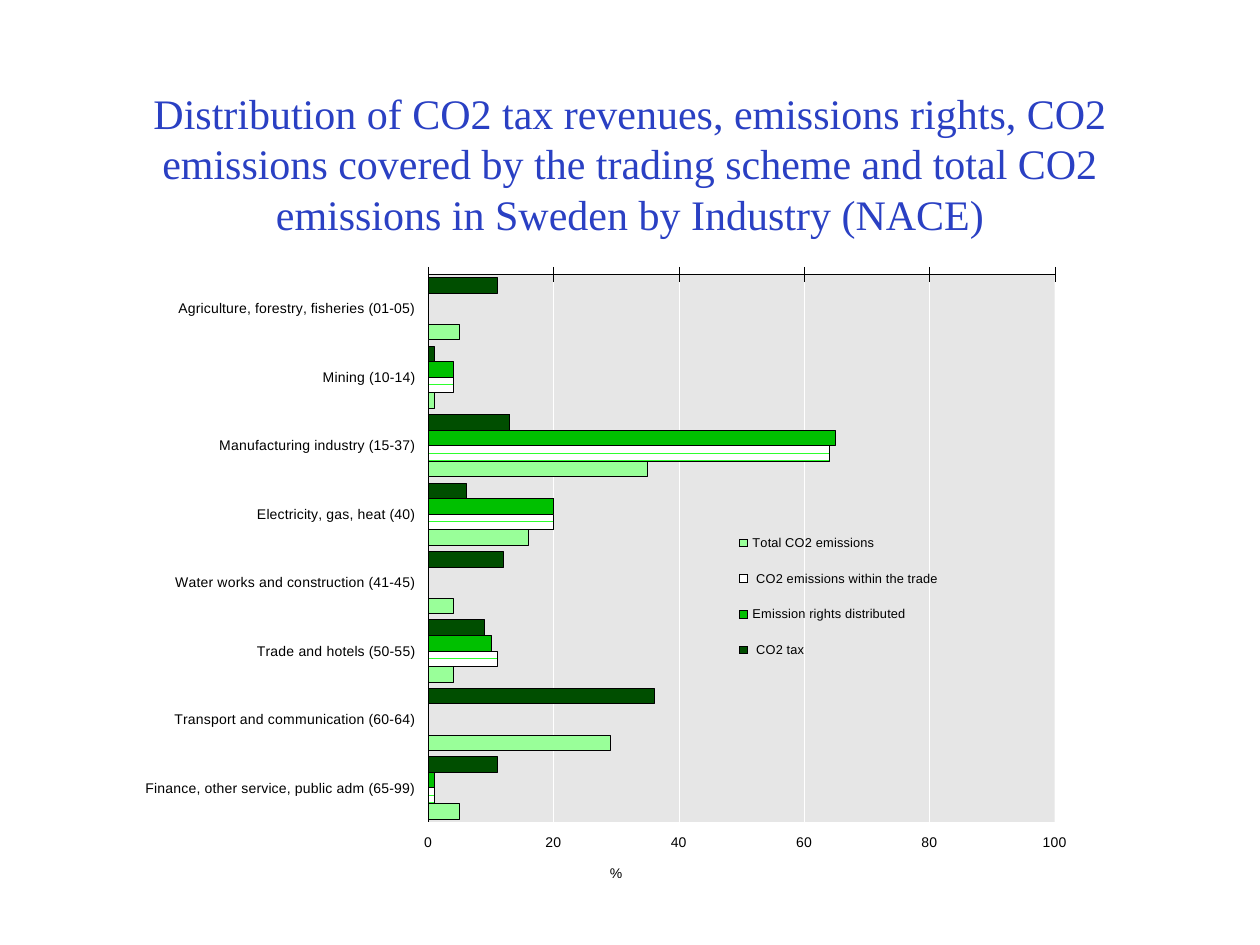
from lxml.etree import SubElement
from pptx import Presentation
from pptx.chart.data import CategoryChartData
from pptx.dml.color import RGBColor
from pptx.enum.chart import (XL_CHART_TYPE, XL_LEGEND_POSITION,
                             XL_TICK_LABEL_POSITION, XL_TICK_MARK)
from pptx.enum.dml import MSO_PATTERN
from pptx.enum.text import MSO_ANCHOR, PP_ALIGN
from pptx.oxml.ns import qn
from pptx.util import Cm, Pt

TITLE = ("Distribution of CO2 tax revenues, emissions rights, CO2 emissions "
         "covered by the trading scheme and total CO2 emissions in Sweden "
         "by Industry (NACE)")

# Industry: one value for each series
ROWS = {
    "Agriculture, forestry, fisheries (01-05)": (11, 0, 0, 5),
    "Mining (10-14)": (1, 4, 4, 1),
    "Manufacturing industry (15-37)": (13, 65, 64, 35),
    "Electricity, gas, heat (40)": (6, 20, 20, 16),
    "Water works and construction (41-45)": (12, 0, 0, 4),
    "Trade and hotels (50-55)": (9, 10, 11, 4),
    "Transport and communication (60-64)": (36, 0, 0, 29),
    "Finance, other service, public adm (65-99)": (11, 1, 1, 5),
}

# Series: a plain colour, or the two colours of a dashed pattern
SERIES = {
    " CO2 tax": ("004E00",),
    "Emission rights distributed": ("00C000",),
    " CO2 emissions within the trade": ("2DFF2D", "FFFFFF"),
    "Total CO2 emissions": ("99FF99",),
}


def color(code):
    return RGBColor.from_string(code)


class Deck:
    ink, head, back, grid = "000000", "2A40C3", "E6E6E6", "FFFFFF"
    sans, serif = "Arial", "Times New Roman"

    def __init__(self, width, height):
        self.file = Presentation()
        self.file.slide_width, self.file.slide_height = Cm(width), Cm(height)
        self.slide = self.file.slides.add_slide(self.file.slide_layouts[6])

    def style(self, font, size, face, code):
        font.size, font.name, font.bold = Pt(size), face, False
        font.color.rgb = color(code)

    def line(self, form, code):
        form.line.width = Pt(0.25)
        form.line.color.rgb = color(code)

    def place(self, node, index, **spots):
        """Give a chart part a fixed place, in fractions of the chart."""
        for old in node.findall(qn("c:layout")):
            node.remove(old)
        layout = SubElement(node, qn("c:layout"))
        node.insert(index, layout)
        manual = SubElement(layout, qn("c:manualLayout"))
        if "w" in spots:
            spots = {"layoutTarget": "inner", **spots} if index == 0 else spots
        modes = {"xMode": "edge", "yMode": "edge"}
        target = {k: v for k, v in spots.items() if k == "layoutTarget"}
        for tag, value in {**target, **modes, **spots}.items():
            SubElement(manual, qn("c:" + tag)).set("val", str(value))

    def title(self, text, *box):
        frame = self.slide.shapes.add_textbox(*map(Cm, box)).text_frame
        frame.word_wrap = True
        frame.vertical_anchor = MSO_ANCHOR.MIDDLE
        par = frame.paragraphs[0]
        par.alignment = PP_ALIGN.CENTER
        run = par.add_run()
        run.text = text
        self.style(run.font, 24, self.serif, self.head)

    def chart(self, rows, series, *box):
        data = CategoryChartData(number_format="#,##0")
        data.categories = list(rows)
        for name, values in zip(series, zip(*rows.values())):
            data.add_series(name, values)
        chart = self.slide.shapes.add_chart(
            XL_CHART_TYPE.BAR_CLUSTERED, *map(Cm, box), data).chart
        chart.has_title = False
        self.style(chart.font, 8, self.sans, self.ink)

        # Bars
        plot = chart.plots[0]
        plot.gap_width, plot.overlap = 40, 0
        plot.vary_by_categories = False
        for bar, codes in zip(plot.series, series.values()):
            fill = bar.format.fill
            if len(codes) == 2:
                fill.patterned()
                fill.pattern = MSO_PATTERN.DASHED_HORIZONTAL
                fill.fore_color.rgb, fill.back_color.rgb = map(color, codes)
            else:
                fill.solid()
                fill.fore_color.rgb = color(codes[0])
            bar.invert_if_negative = False
            self.line(bar.format, self.ink)
        self.axes(chart)
        self.legend(chart)

        # Plot area
        area = chart.element.find(".//" + qn("c:plotArea"))
        self.place(area, 0, x=0.27, y=0.046, w=0.595, h=0.844)
        fill = SubElement(SubElement(area, qn("c:spPr")), qn("a:solidFill"))
        SubElement(fill, qn("a:srgbClr")).set("val", self.back)

    def axes(self, chart):
        cats, vals = chart.category_axis, chart.value_axis
        for axis in (cats, vals):
            self.style(axis.tick_labels.font, 8, self.sans, self.ink)
            self.line(axis.format, self.ink)
            axis.minor_tick_mark = XL_TICK_MARK.NONE
        cats.reverse_order = True
        cats.major_tick_mark = XL_TICK_MARK.NONE
        cats.tick_label_position = XL_TICK_LABEL_POSITION.LOW

        # The reversed order puts the high side at the bottom
        vals.tick_label_position = XL_TICK_LABEL_POSITION.HIGH
        vals.major_tick_mark = XL_TICK_MARK.CROSS
        vals.minimum_scale, vals.maximum_scale, vals.major_unit = 0, 100, 20
        vals.tick_labels.number_format = "#,##0"
        vals.tick_labels.number_format_is_linked = False
        vals.has_major_gridlines = True
        self.line(vals.major_gridlines.format, self.grid)
        run = vals.axis_title.text_frame.paragraphs[0].add_run()
        run.text = "%"
        self.style(run.font, 8, self.sans, self.ink)
        self.place(vals.axis_title._element, 1, x=0.44, y=0.95)

    def legend(self, chart):
        chart.has_legend = True
        key = chart.legend
        key.position = XL_LEGEND_POSITION.RIGHT
        key.include_in_layout = False
        self.style(key.font, 7.3, self.sans, self.ink)
        self.place(key._element, 1, x=0.55, y=0.416, w=0.22, h=0.253)


def main():
    deck = Deck(25.4, 19.05)
    deck.title(TITLE, 1.9, 1.7, 21.6, 3.18)
    deck.chart(ROWS, SERIES, 2.9, 4.93, 21.23, 13.08)
    deck.file.save("out.pptx")


if __name__ == "__main__":
    main()
